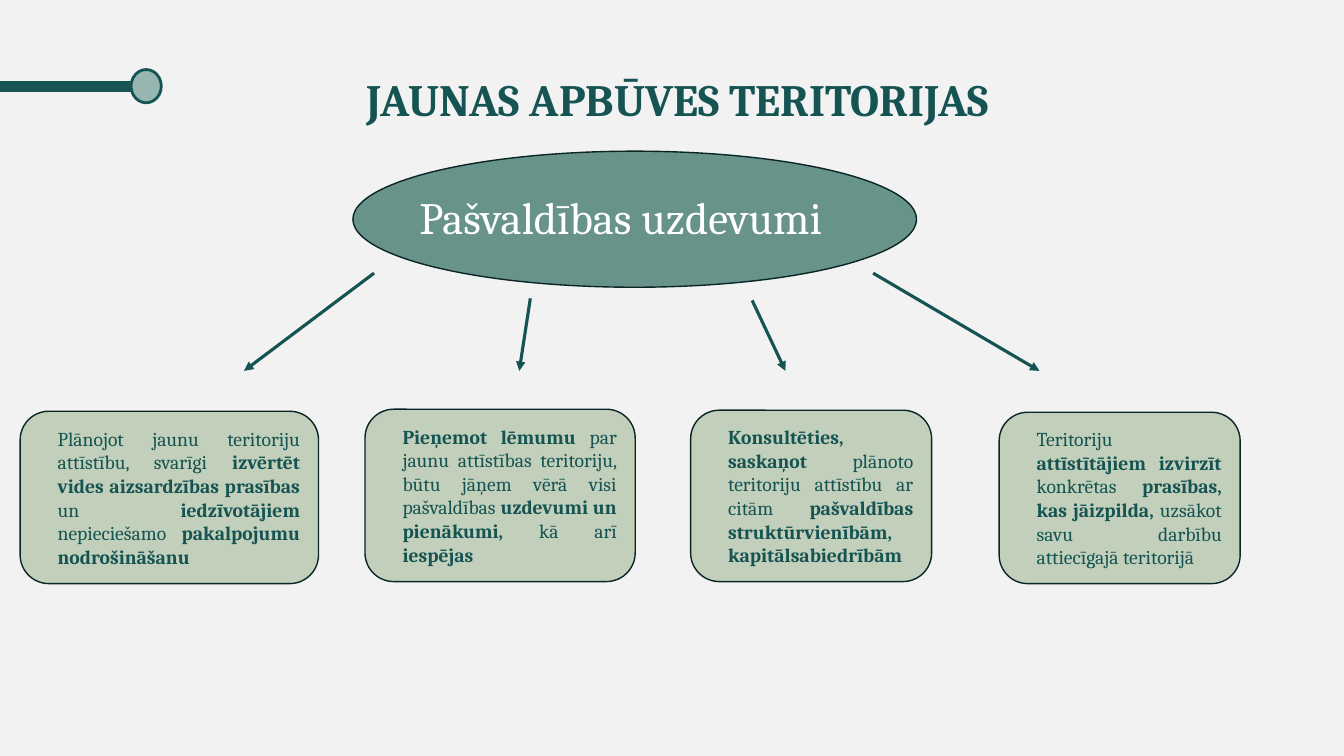
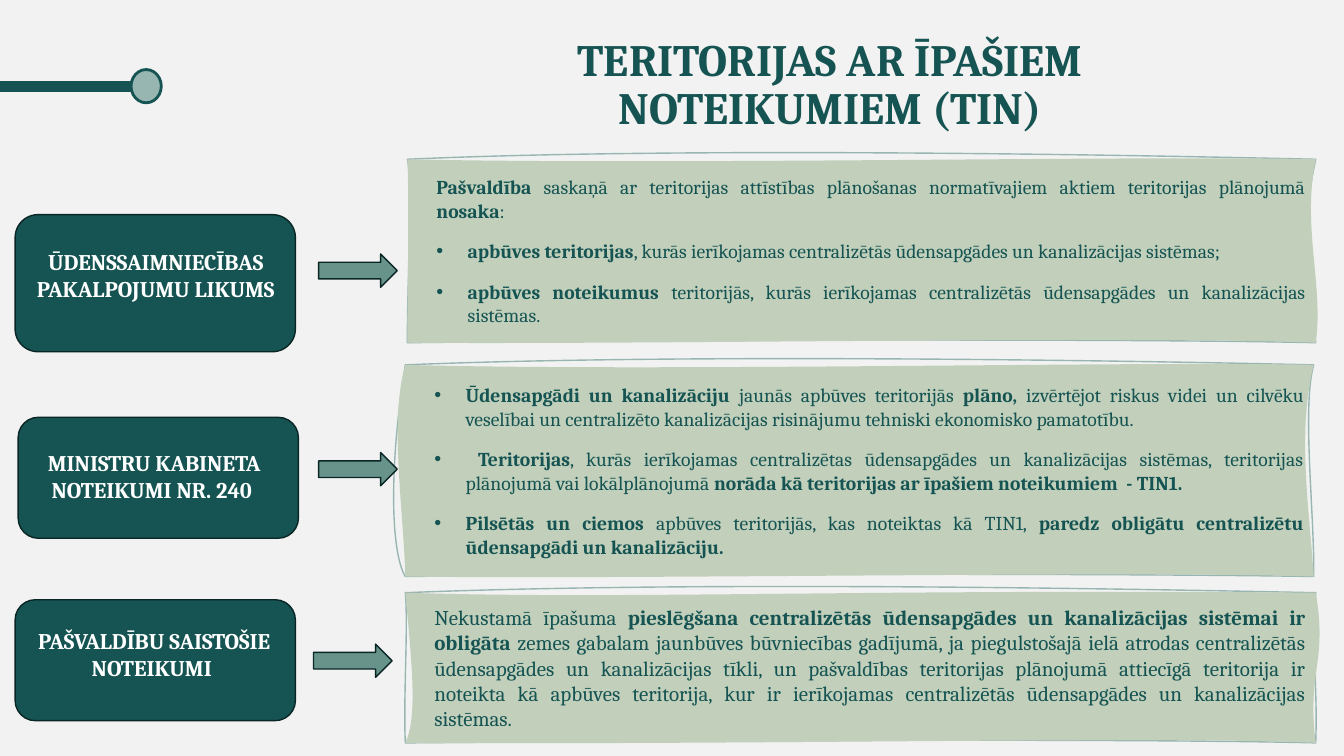
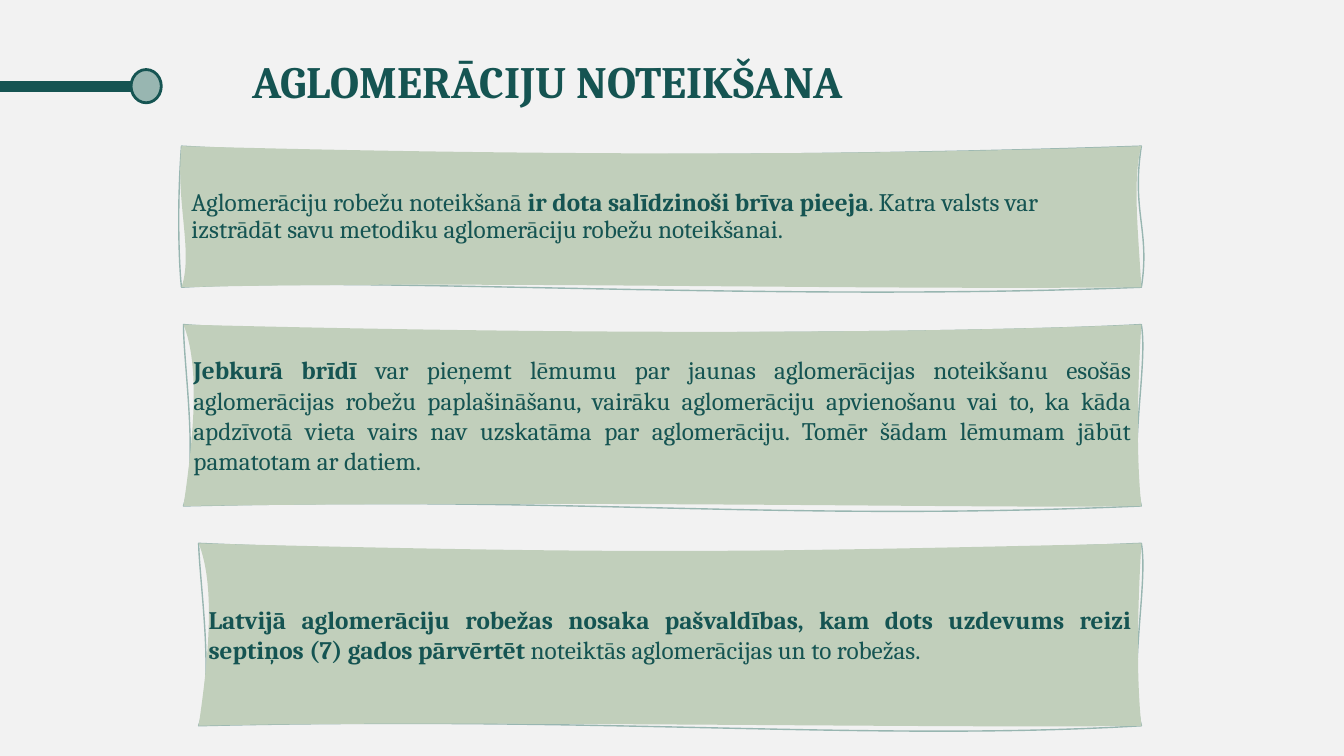
"""Three slides on new building areas, special-rule territories and agglomerations."""
from lxml import etree
from pptx import Presentation
from pptx.dml import color
from pptx.enum import shapes, text
from pptx.oxml import ns
from pptx.util import Inches, Pt

FONT = "Cambria"
PAPER, DEEP, TEAL, MIST, SAGE, EDGE, WHITE = (
    "F2F2F2", "155452", "68938B", "98B6B1", "C1CFBB", "092524", "FFFFFF")
SHAPE, ALIGN = shapes.MSO_SHAPE, text.PP_ALIGN
INDENT, BULLET_INDENT, HANGING = 0.19, 0.5, -0.31

# Bold wording stands between ** marks; a paragraph that starts with • is a bullet.
TASKS_TITLE = ("JAUNAS APBŪVES TERITORIJAS ", (2.03, 0.29, 9.49, 1.45))
TASKS_HUB = ("Pašvaldības uzdevumi ", (3.5, 1.5, 5.59, 1.35), (3.87, 1.83, 4.84, 0.64))
TASK_ARROWS = [
    ((3.71, 2.71), (2.42, 3.68)), ((5.26, 2.96), (5.15, 3.68)),
    ((7.46, 2.98), (7.79, 3.68)), ((8.66, 2.71), (10.31, 3.68))]
TASKS = [
    ((0.2, 4.08, 2.96, 1.71), 12,
     "Plānojot jaunu teritoriju attīstību, svarīgi **izvērtēt vides aizsardzības prasības **un "
     "**iedzīvotājiem** nepieciešamo **pakalpojumu nodrošināšanu **"),
    ((3.62, 4.06, 2.68, 1.71), 12,
     "**Pieņemot lēmumu **par jaunu attīstības teritoriju, būtu jāņem vērā visi pašvaldības "
     "**uzdevumi un pienākumi, **kā arī **iespējas**"),
    ((6.85, 4.07, 2.39, 1.7), 6,
     "**Konsultēties, saskaņot** plānoto teritoriju attīstību ar citām "
     "**pašvaldības struktūrvienībām, kapitālsabiedrībām**"),
    ((9.91, 4.09, 2.39, 1.7), 6,
     "Teritoriju **attīstītājiem izvirzīt **konkrētas  **prasības, kas jāizpilda,** "
     "uzsākot savu darbību attiecīgajā teritorijā "),
]

RULES_TITLE = ("TERITORIJAS AR ĪPAŠIEM NOTEIKUMIEM (TIN)", (4.25, 0.13, 7.97, 1.45))
RULE_SOURCES = [
    ("ŪDENSSAIMNIECĪBAS PAKALPOJUMU LIKUMS ", (0.15, 2.13, 2.78, 1.36), (0.25, 2.41, 2.59, 0.64)),
    ("MINISTRU KABINETA NOTEIKUMI NR. 240 ", (0.18, 4.14, 2.78, 1.2), (0.2, 4.41, 2.66, 0.64)),
    ("PAŠVALDĪBU SAISTOŠIE NOTEIKUMI ", (0.15, 5.95, 2.78, 1.2), (0.27, 6.17, 2.52, 0.68)),
]
RULE_ARROWS = [(3.16, 2.52), (3.16, 4.49), (3.11, 6.39)]

# Panels: corners are left, top, right, bottom; the bends of the outline and of
# the fill give two control points for the top, right, bottom and left sides.
RULES = [
    dict(corners=(4.04, 1.58, 13.05, 3.4), size=14, after=12, indent=INDENT,
         outline=[(6.69, 1.46), (10.89, 1.53), (12.91, 2.21), (12.93, 2.61),
                  (11.32, 3.36), (6.53, 3.37), (4.04, 2.5), (4.11, 1.92)],
         fill=[(6.62, 1.64), (11.37, 1.54), (12.91, 2.25), (13.13, 2.83),
               (11.32, 3.33), (6.29, 3.42), (4.04, 2.92), (4.06, 2.01)],
         wording=[
             "**Pašvaldība** saskaņā ar teritorijas attīstības plānošanas normatīvajiem aktiem "
             "teritorijas plānojumā **nosaka**: ",
             "•**apbūves teritorijas**, kurās ierīkojamas centralizētās ūdensapgādes un "
             "kanalizācijas sistēmas;",
             "•**apbūves noteikumus **teritorijās, kurās ierīkojamas centralizētās ūdensapgādes un "
             "kanalizācijas sistēmas."]),
    dict(corners=(4.02, 3.62, 13.03, 5.72), size=14, after=12, indent=INDENT,
         outline=[(6.67, 3.51), (10.87, 3.57), (12.91, 4.03), (13.04, 5.13),
                  (11.3, 5.69), (6.51, 5.69), (3.87, 5.47), (3.86, 4.61)],
         fill=[(6.6, 3.69), (11.35, 3.58), (12.86, 4.27), (12.99, 5.09),
               (11.3, 5.66), (6.27, 5.75), (4, 5.03), (3.86, 4.17)],
         wording=[
             "•**Ūdensapgādi un kanalizāciju** jaunās apbūves teritorijās **plāno,** izvērtējot "
             "riskus videi un cilvēku veselībai un centralizēto kanalizācijas risinājumu tehniski "
             "ekonomisko pamatotību.",
             "•** Teritorijas**, kurās ierīkojamas centralizētas ūdensapgādes un kanalizācijas "
             "sistēmas, teritorijas plānojumā vai lokālplānojumā **norāda kā teritorijas ar "
             "īpašiem noteikumiem  - TIN1.**",
             "•**Pilsētās un ciemos **apbūves teritorijās, kas noteiktas kā TIN1, **paredz "
             "obligātu centralizētu ūdensapgādi un kanalizāciju.**"]),
    dict(corners=(4.02, 5.88, 13.05, 7.37), size=15, after=12, indent=INDENT,
         outline=[(6.76, 5.77), (10.66, 5.83), (13.01, 6.57), (13.07, 6.78),
                  (11.47, 7.33), (7.26, 7.34), (4, 6.9), (4.05, 6.21)],
         fill=[(6.2, 5.95), (8.61, 5.84), (13.17, 6.57), (12.96, 6.66),
               (11.59, 7.3), (7.65, 7.39), (4.14, 7.12), (4.09, 6.62)],
         wording=[
             "Nekustamā īpašuma **pieslēgšana centralizētās ūdensapgādes un kanalizācijas sistēmai "
             "ir obligāta **zemes gabalam jaunbūves būvniecības gadījumā, ja piegulstošajā ielā "
             "atrodas centralizētās ūdensapgādes un kanalizācijas tīkli, un pašvaldības teritorijas "
             "plānojumā attiecīgā teritorija ir noteikta kā apbūves teritorija, kur ir ierīkojamas "
             "centralizētās ūdensapgādes un kanalizācijas sistēmas. "]),
]

AGGLOMERATION_TITLE = ("AGLOMERĀCIJU NOTEIKŠANA", (2.28, 0.17, 6.3, 1.33))
AGGLOMERATION = [
    dict(corners=(1.8, 1.45, 11.32, 2.85), size=18, align=ALIGN.LEFT, spacing=0.9,
         outline=[(3.56, 1.56), (7.89, 1.57), (11.22, 2.1), (11.41, 2.29),
                  (7.65, 3), (3.66, 2.74), (1.78, 2.69), (1.75, 2.1)],
         fill=[(6.13, 1.57), (9.43, 1.52), (11.23, 1.77), (11.29, 2.32),
               (8.3, 2.88), (4.62, 2.78), (1.92, 2.5), (1.74, 2.01)],
         wording=[
             "Aglomerāciju robežu noteikšanā **ir dota salīdzinoši brīva pieeja**. Katra valsts "
             "var izstrādāt savu metodiku aglomerāciju robežu noteikšanai."]),
    dict(corners=(1.97, 5.39, 11.32, 7.2), size=18, after=6,
         outline=[(4.35, 5.5), (8.23, 5.52), (11.39, 5.78), (11.19, 6.68),
                  (8.63, 7.36), (6.02, 7.1), (2.13, 6.76), (1.98, 5.8)],
         fill=[(6.59, 5.51), (7.59, 5.47), (11.27, 6.25), (11.28, 6.8),
               (9.61, 7.23), (4.36, 7.14), (2.08, 6.46), (2.13, 5.79)],
         wording=[
             "**Latvijā aglomerāciju robežas nosaka pašvaldības, kam dots uzdevums reizi septiņos "
             "(7) gados pārvērtēt** noteiktās aglomerācijas un to robežas. "]),
    dict(corners=(1.82, 3.22, 11.32, 5.02), size=18, after=6,
         outline=[(2.99, 3.32), (9.19, 3.34), (11.39, 3.6), (11.19, 4.5),
                  (7.74, 5.18), (5.76, 4.92), (1.97, 4.58), (1.82, 3.62)],
         fill=[(6.48, 3.34), (9.59, 3.29), (11.27, 4.07), (11.28, 4.62),
               (10, 5.05), (6.18, 4.96), (1.93, 4.28), (1.98, 3.62)],
         wording=[
             "**Jebkurā brīdī **var pieņemt lēmumu par jaunas aglomerācijas noteikšanu esošās "
             "aglomerācijas robežu paplašināšanu, vairāku aglomerāciju apvienošanu vai to, ka kāda "
             "apdzīvotā vieta vairs nav uzskatāma par aglomerāciju. Tomēr šādam lēmumam jābūt "
             "pamatotam ar datiem. "]),
]


def rgb(value):
    """Turn a hex string into a colour."""
    return color.RGBColor.from_string(value)


def inches(values):
    """Convert numbers to lengths."""
    return [Inches(value) for value in values]


def paint(shape, fill, line, width=1):
    """Give a shape its fill and line, without a shadow."""
    shape.shadow.inherit = False
    shape.fill.solid()
    shape.fill.fore_color.rgb = rgb(fill)
    shape.line.color.rgb = rgb(line)
    shape.line.width = Pt(width)


def write(shape, wording, size, ink=DEEP, align=ALIGN.JUSTIFY, anchor=text.MSO_ANCHOR.MIDDLE,
          after=0, indent=0, spacing=None):
    """Write paragraphs with bold parts and bullets into a shape."""
    frame = shape.text_frame
    frame.word_wrap, frame.vertical_anchor = True, anchor
    for position, words in enumerate(wording):
        paragraph = frame.add_paragraph() if position else frame.paragraphs[0]
        paragraph.alignment, paragraph.line_spacing = align, spacing
        paragraph.space_after = Pt(after)
        bulleted = words.startswith("•")
        layout = paragraph._p.get_or_add_pPr()
        layout.set("marL", str(Inches(BULLET_INDENT if bulleted else indent)))
        layout.set("indent", str(Inches(HANGING if bulleted else 0)))
        if bulleted:
            etree.SubElement(layout, ns.qn("a:buFont")).set("typeface", "Arial")
            etree.SubElement(layout, ns.qn("a:buChar")).set("char", "•")
        for part, piece in enumerate(words.removeprefix("•").split("**")):
            if piece:
                run = paragraph.add_run()
                run.text = piece
                run.font.name, run.font.size, run.font.bold = FONT, Pt(size), part % 2 == 1
                run.font.color.rgb = rgb(ink)


def add_line(slide, start, end, width, arrow=False):
    """Draw a straight line, with an arrowhead if asked."""
    line = slide.shapes.add_connector(
        shapes.MSO_CONNECTOR.STRAIGHT, *inches(start), *inches(end))
    line.line.color.rgb = rgb(DEEP)
    line.line.width = Pt(width)
    if arrow:
        stroke = line.line._get_or_add_ln()
        etree.SubElement(stroke, ns.qn("a:tailEnd")).set("type", "triangle")
    etree.SubElement(line._element.spPr, ns.qn("a:effectLst"))


def add_block(parent, kind, box, fill, line=EDGE, width=1):
    """Add a painted preset shape."""
    block = parent.shapes.add_shape(kind, *inches(box))
    paint(block, fill, line, width)
    return block


def add_label(slide, kind, label, box, label_box, fill, **style):
    """Group a shape with the white label on it."""
    group = slide.shapes.add_group_shape()
    add_block(group, kind, box, fill)
    caption = group.shapes.add_textbox(*inches(label_box))
    write(caption, [label], ink=WHITE, anchor=text.MSO_ANCHOR.TOP, **style)


def add_points(outline, command, points, origin):
    """Append a drawing command with its points, measured from the origin."""
    step = etree.SubElement(outline, ns.qn(f"a:{command}"))
    for point in points:
        spot = etree.SubElement(step, ns.qn("a:pt"))
        for axis, value, start in zip("xy", point, origin):
            spot.set(axis, str(Inches(value) - Inches(start)))


def add_panel(slide, corners, outline, fill, wording, **style):
    """Add a panel whose line and fill bend apart from each other."""
    left, top, right, bottom = corners
    turns = [(left, top), (right, top), (right, bottom), (left, bottom), (left, top)]
    builder = slide.shapes.build_freeform(*inches(turns[0]))
    builder.add_line_segments([inches(turn) for turn in turns[1:4]], close=True)
    panel = builder.convert_to_shape()
    straight = next(panel._element.iter(ns.qn("a:path")))
    layers = straight.getparent()
    for bends, setting in ((outline, ("fill", "none")), (fill, ("stroke", "0"))):
        layer = etree.SubElement(layers, ns.qn("a:path"))
        layer.set("w", str(panel.width))
        layer.set("h", str(panel.height))
        layer.set(*setting)
        add_points(layer, "moveTo", turns[:1], turns[0])
        for side, turn in enumerate(turns[1:]):
            add_points(layer, "cubicBezTo", [*bends[2 * side:2 * side + 2], turn], turns[0])
        etree.SubElement(layer, ns.qn("a:close"))
    layers.remove(straight)
    paint(panel, SAGE, MIST)
    write(panel, wording, **style)


def start_slide(deck, title, box):
    """Add a slide with its title and the bar with a knob."""
    slide = deck.slides.add_slide(deck.slide_layouts[6])
    heading = slide.shapes.add_textbox(*inches(box))
    write(heading, [f"**{title}**"], 32, align=ALIGN.CENTER, spacing=0.9)
    add_line(slide, (-0.01, 0.86), (1.31, 0.86), 8)
    add_block(slide, SHAPE.OVAL, (1.3, 0.69, 0.3, 0.33), MIST, DEEP, 2)
    return slide


def main():
    """Build and save the deck."""
    deck = Presentation()
    deck.slide_width, deck.slide_height = Inches(13.33), Inches(7.5)
    paper = deck.slide_master.background.fill
    paper.solid()
    paper.fore_color.rgb = rgb(PAPER)

    tasks = start_slide(deck, *TASKS_TITLE)
    add_label(tasks, SHAPE.OVAL, *TASKS_HUB, TEAL, size=32, after=12, indent=INDENT)
    for start, end in TASK_ARROWS:
        add_line(tasks, start, end, 2.25, arrow=True)
    for box, after, task in TASKS:
        card = add_block(tasks, SHAPE.ROUNDED_RECTANGLE, box, SAGE)
        write(card, [task], 14, after=after, indent=INDENT)

    rules = start_slide(deck, *RULES_TITLE)
    for label, box, label_box in RULE_SOURCES:
        add_label(rules, SHAPE.ROUNDED_RECTANGLE, f"**{label}**", box, label_box, DEEP,
                  size=16, align=ALIGN.CENTER)
    for panel in RULES:
        add_panel(rules, **panel)
    for corner in RULE_ARROWS:
        add_block(rules, SHAPE.RIGHT_ARROW, (*corner, 0.78, 0.33), TEAL)

    agglomeration = start_slide(deck, *AGGLOMERATION_TITLE)
    for panel in AGGLOMERATION:
        add_panel(agglomeration, **panel)

    deck.save("out.pptx")


if __name__ == "__main__":
    main()
